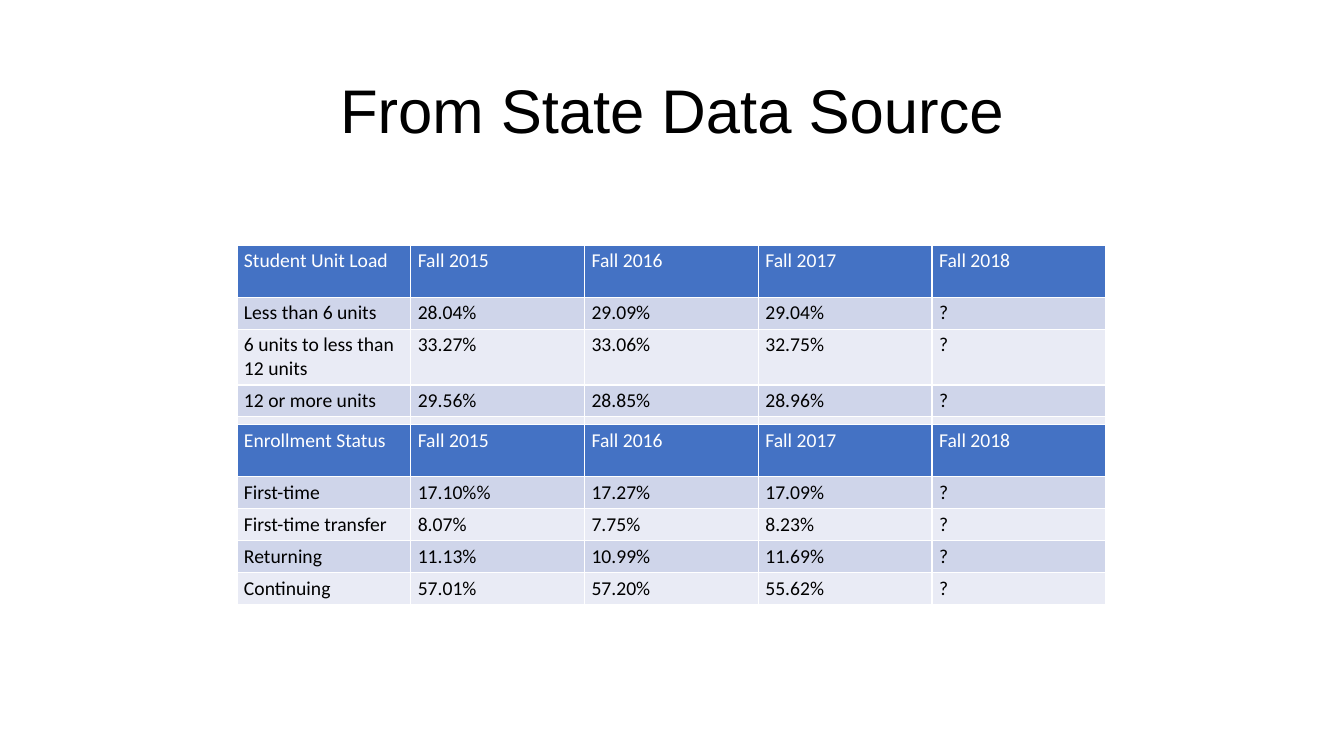
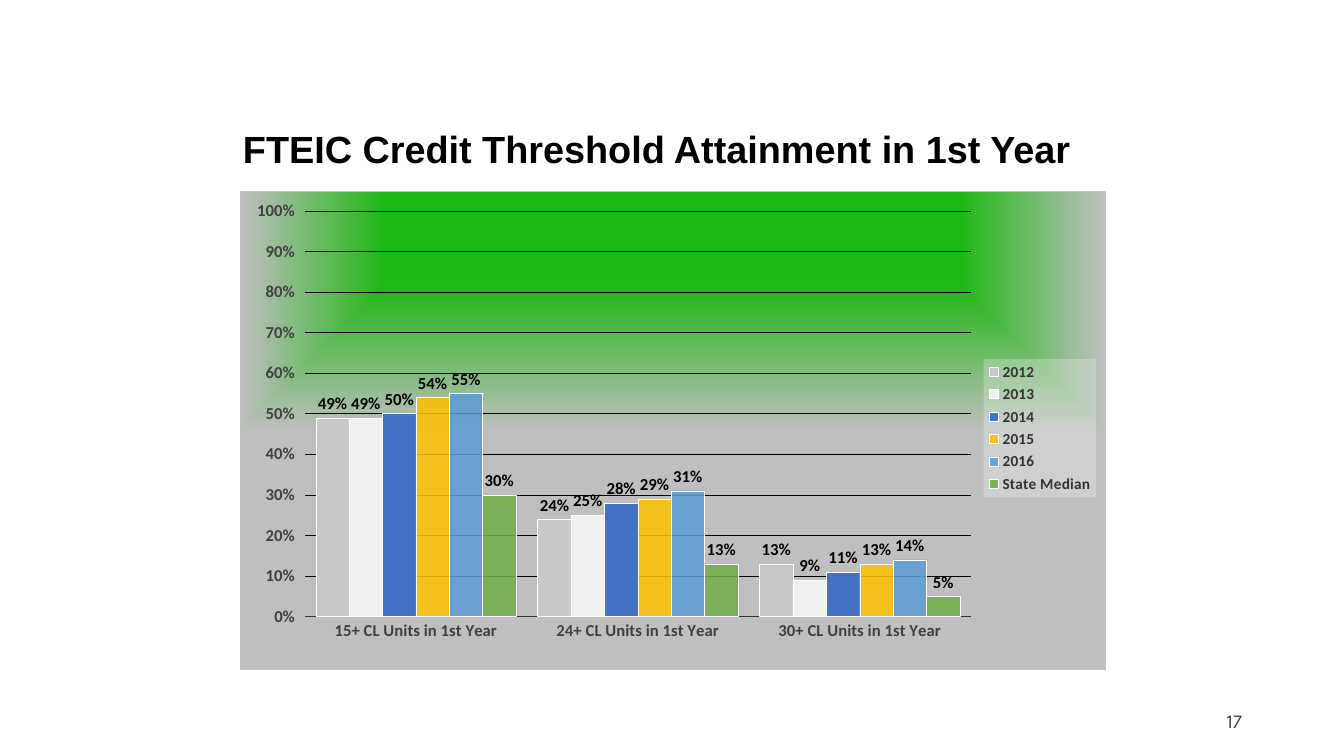
from lxml import etree
from pptx import Presentation
from pptx.chart.data import CategoryChartData
from pptx.dml.color import RGBColor
from pptx.enum.chart import XL_CHART_TYPE as ChartType
from pptx.enum.chart import XL_LABEL_POSITION as LabelPosition
from pptx.enum.chart import XL_LEGEND_POSITION as LegendPosition
from pptx.enum.chart import XL_TICK_MARK as TickMark
from pptx.enum.text import MSO_ANCHOR as Anchor
from pptx.enum.text import PP_ALIGN as Align
from pptx.oxml import parse_xml
from pptx.oxml.ns import nsdecls, qn
from pptx.util import Inches, Pt

# Shared style
BLACK, WHITE = "000000", "FFFFFF"
HEADER_FILL = "4472C4"
BAND_FILLS = ("CFD5EA", "E9EBF5")
TITLE_FONT, BODY_FONT, NUMBER_FONT = "Arial", "Calibri", "League Spartan"

# Table content
TERMS = ["Fall 2015", "Fall 2016", "Fall 2017", "Fall 2018"]
UNIT_LOAD = [
    ["Student Unit Load", *TERMS],
    ["Less than 6 units", "28.04%", "29.09%", "29.04%", "?"],
    ["6 units to less than 12 units", "33.27%", "33.06%", "32.75%", "?"],
    ["12 or more units", "29.56%", "28.85%", "28.96%", "?"],
    [""] * 5,
]
ENROLLMENT = [
    ["Enrollment Status", *TERMS],
    ["First-time", "17.10%%", "17.27%", "17.09%", "?"],
    ["First-time transfer", "8.07%", "7.75%", "8.23%", "?"],
    ["Returning", "11.13%", "10.99%", "11.69%", "?"],
    ["Continuing", "57.01%", "57.20%", "55.62%", "?"],
]

# Chart content: name, values, colour, opacity in percent, label size
CATEGORIES = [f"{units}+ CL Units in 1st Year" for units in (15, 24, 30)]
SERIES = [
    ("2012", (0.49, 0.24, 0.13), "C9C9C9", 100, 12),
    ("2013", (0.49, 0.25, 0.09), "F1F0F0", 100, 12),
    ("2014", (0.50, 0.28, 0.11), "4472C4", 100, 12),
    ("2015", (0.54, 0.29, 0.13), "FFC000", 85, 12),
    ("2016", (0.55, 0.31, 0.14), "5B9BD5", 85, 11.9),
    ("State Median", (0.30, 0.13, 0.05), "70AD47", 85, 11.9),
]


def rgb(color):
    return RGBColor.from_string(color)


def style_font(font, size, color, name=BODY_FONT, bold=False):
    font.name, font.size, font.bold = name, Pt(size), bold
    font.color.rgb = rgb(color)


def style_line(line, color, width):
    line.color.rgb = rgb(color)
    line.width = Pt(width)


def add_text(text_frame, text, size, color, align, **font_options):
    text_frame.word_wrap = True
    text_frame.vertical_anchor = Anchor.MIDDLE
    paragraph = text_frame.paragraphs[0]
    paragraph.alignment = align
    run = paragraph.add_run()
    run.text = text
    style_font(run.font, size, color, **font_options)
    return paragraph


def add_titled_slide(presentation, title, box, size, align, bold=False):
    slide = presentation.slides.add_slide(presentation.slide_layouts[5])
    shape = slide.shapes.title
    shape.left, shape.top, shape.width, shape.height = map(Inches, box)
    paragraph = add_text(shape.text_frame, title, size, BLACK, align,
                         name=TITLE_FONT, bold=bold)
    paragraph.line_spacing = 0.9
    return slide


# Tables
def add_cell_borders(cell):
    properties = cell._tc.get_or_add_tcPr()
    for index, side in enumerate("LRTB"):
        properties.insert(index, parse_xml(
            f'<a:ln{side} {nsdecls("a")} w="{Pt(1)}"><a:solidFill>'
            f'<a:srgbClr val="{WHITE}"/></a:solidFill></a:ln{side}>'))


def add_banded_table(slide, rows, box, heights):
    frame = slide.shapes.add_table(len(rows), len(rows[0]), *map(Inches, box))
    table = frame.table
    table.first_row = table.horz_banding = False
    for column in table.columns:
        column.width = Inches(box[2] / len(rows[0]))
    for row_index, values in enumerate(rows):
        header = row_index == 0
        table.rows[row_index].height = Inches(heights[row_index])
        for column_index, value in enumerate(values):
            cell = table.cell(row_index, column_index)
            cell.margin_left = cell.margin_right = Inches(0.07)
            cell.margin_top = cell.margin_bottom = Inches(0.04)
            cell.fill.solid()
            cell.fill.fore_color.rgb = rgb(
                HEADER_FILL if header else BAND_FILLS[(row_index - 1) % 2])
            add_cell_borders(cell)
            if value:
                run = cell.text_frame.paragraphs[0].add_run()
                run.text = value
                style_font(run.font, 14, WHITE if header else BLACK)


# Chart
def manual_layout(x, y, width, height, inner=False):
    target = '<c:layoutTarget val="inner"/>' if inner else ""
    return parse_xml(
        f'<c:layout {nsdecls("c")}><c:manualLayout>{target}'
        '<c:xMode val="edge"/><c:yMode val="edge"/>'
        f'<c:x val="{x}"/><c:y val="{y}"/><c:w val="{width}"/>'
        f'<c:h val="{height}"/></c:manualLayout></c:layout>')


def shape_properties(content):
    return parse_xml(f'<c:spPr {nsdecls("c", "a")}>{content}</c:spPr>')


def drop_layout(element):
    for layout in element.findall(qn("c:layout")):
        element.remove(layout)


def style_chart_area(chart):
    stops = "".join(
        f'<a:gs pos="{position * 1000}"><a:srgbClr val="{color}"/></a:gs>'
        for position, color in ((0, "1FB714"), (39, "1FB714"), (100, "BFBFBF")))
    chart_element = chart._chartSpace.find(qn("c:chart"))
    chart_element.addnext(shape_properties(
        f'<a:gradFill><a:gsLst>{stops}</a:gsLst><a:path path="rect">'
        '<a:fillToRect l="50000" t="-80000" r="50000" b="180000"/></a:path>'
        f'</a:gradFill><a:ln w="{Pt(0.25)}"><a:solidFill>'
        '<a:srgbClr val="C0C0C0"/></a:solidFill></a:ln>'))
    plot_area = chart_element.find(qn("c:plotArea"))
    drop_layout(plot_area)
    plot_area.insert(0, manual_layout(0.075, 0.04, 0.77, 0.85, inner=True))
    plot_area.append(shape_properties("<a:noFill/>"))


def style_axes(chart):
    category_axis, value_axis = chart.category_axis, chart.value_axis
    for axis in (category_axis, value_axis):
        style_font(axis.tick_labels.font, 11.9, "404040", bold=True)
        axis.minor_tick_mark = TickMark.NONE
    category_axis.major_tick_mark = TickMark.NONE
    style_line(category_axis.format.line, "333333", 1)
    value_axis.major_tick_mark = TickMark.OUTSIDE
    value_axis.format.line.fill.background()
    value_axis.minimum_scale, value_axis.maximum_scale = 0, 1
    value_axis.major_unit = 0.1
    value_axis.tick_labels.number_format = "0%"
    value_axis.tick_labels.number_format_is_linked = False
    style_line(value_axis.major_gridlines.format.line, BLACK, 0.25)


def style_legend(chart):
    chart.has_legend = True
    legend = chart.legend
    legend.position = LegendPosition.RIGHT
    legend.include_in_layout = False
    style_font(legend.font, 10.9, "333333", bold=True)
    element = legend._element
    drop_layout(element)
    element.find(qn("c:legendPos")).addnext(
        manual_layout(0.86, 0.35, 0.13, 0.29))
    element.find(qn("c:txPr")).addprevious(shape_properties(
        f'<a:solidFill><a:srgbClr val="{WHITE}"><a:alpha val="25000"/>'
        '</a:srgbClr></a:solidFill>'))


def style_series(series, color, opacity, label_size):
    series.format.fill.solid()
    series.format.fill.fore_color.rgb = rgb(color)
    style_line(series.format.line, WHITE, 0.25)
    if opacity < 100:
        fill_color = series._element.xpath(
            "./c:spPr/a:solidFill/a:srgbClr")[0]
        alpha = etree.SubElement(fill_color, qn("a:alpha"))
        alpha.set("val", str(opacity * 1000))
    labels = series.data_labels
    labels.show_value = True
    labels.position = LabelPosition.OUTSIDE_END
    labels.number_format = "0%"
    labels.number_format_is_linked = False
    style_font(labels.font, label_size, BLACK, bold=True)


def add_attainment_chart(slide, box):
    data = CategoryChartData(number_format="0%")
    data.categories = CATEGORIES
    for name, values, *_ in SERIES:
        data.add_series(name, values)
    chart = slide.shapes.add_chart(
        ChartType.COLUMN_CLUSTERED, *map(Inches, box), data).chart
    chart.has_title = False
    style_font(chart.font, 10, BLACK)
    plot = chart.plots[0]
    plot.gap_width, plot.overlap = 65, 0
    plot.vary_by_categories = False
    for series, (_, _, *style) in zip(plot.series, SERIES):
        style_series(series, *style)
    style_axes(chart)
    style_legend(chart)
    style_chart_area(chart)


def add_page_number(slide, number, box):
    text_box = slide.shapes.add_textbox(*map(Inches, box))
    add_text(text_box.text_frame, number, 13.5, "443C29", Align.RIGHT,
             name=NUMBER_FONT)


# Slides
def build_enrollment_slide(presentation):
    slide = add_titled_slide(presentation, "From State Data Source",
                             (0.92, 0.4, 11.5, 1.45), 44, Align.CENTER)
    add_banded_table(slide, UNIT_LOAD, (2.35, 2.43, 8.62, 1.99),
                     (0.52, 0.3, 0.52, 0.3, 0.3))
    add_banded_table(slide, ENROLLMENT, (2.35, 4.21, 8.62, 1.76),
                     (0.52, 0.3, 0.3, 0.3, 0.3))


def build_attainment_slide(presentation):
    slide = add_titled_slide(
        presentation, "FTEIC Credit Threshold Attainment in 1st Year",
        (2.31, 1.13, 8.97, 0.75), 27, Align.LEFT, bold=True)
    add_page_number(slide, "17", (9.42, 6.95, 3, 0.4))
    add_attainment_chart(slide, (2.38, 1.9, 8.58, 4.74))


def main():
    presentation = Presentation()
    presentation.slide_width = Inches(13.33)
    presentation.slide_height = Inches(7.5)
    build_enrollment_slide(presentation)
    build_attainment_slide(presentation)
    presentation.save("out.pptx")


if __name__ == "__main__":
    main()
